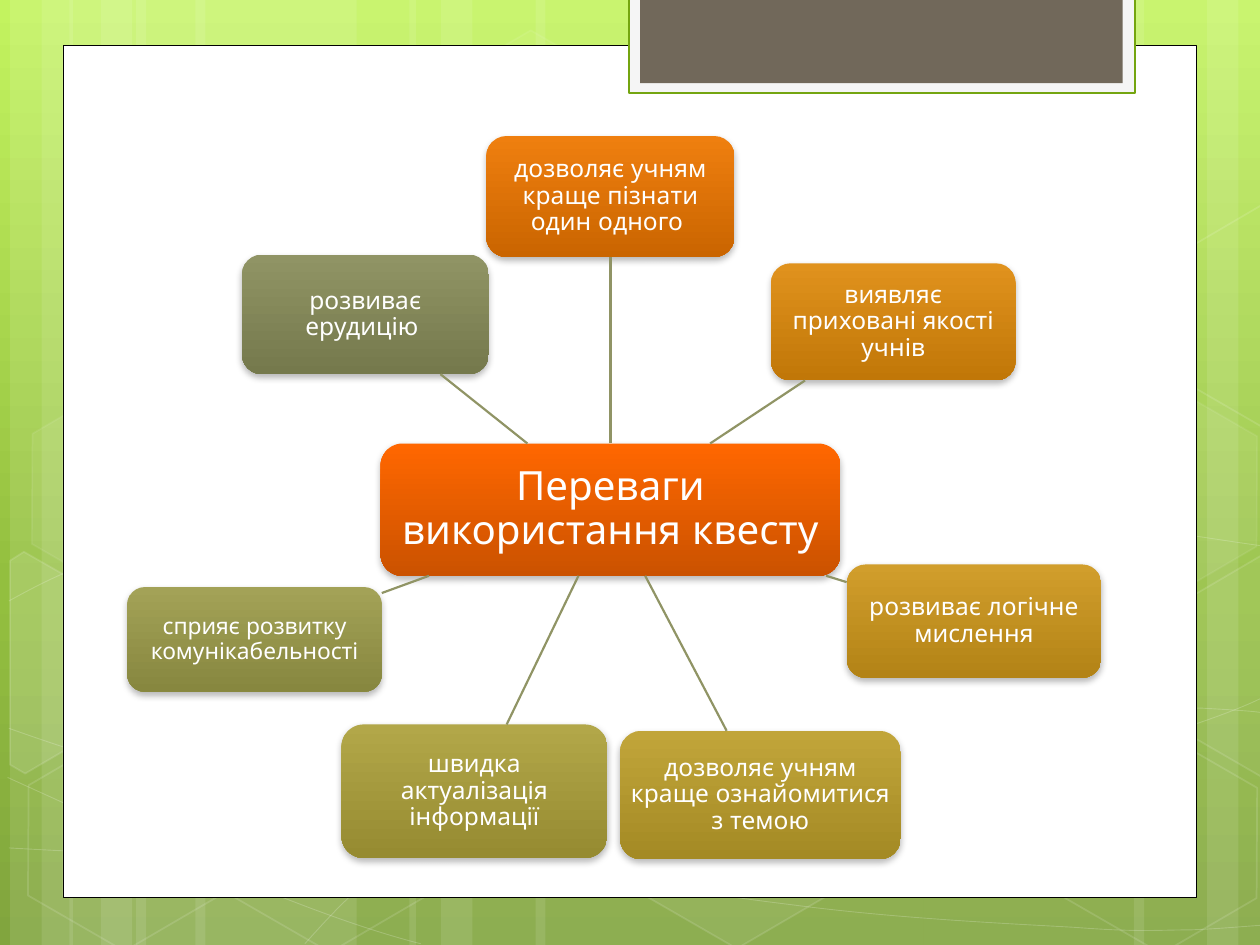
from lxml import etree
from copy import deepcopy
from pptx import Presentation
from pptx.dml.color import RGBColor
from pptx.enum.shapes import MSO_CONNECTOR, MSO_SHAPE
from pptx.enum.text import MSO_ANCHOR, PP_ALIGN
from pptx.oxml.ns import qn
from pptx.util import Inches, Pt

WHITE = RGBColor(0xFF, 0xFF, 0xFF)
BLACK = RGBColor(0x00, 0x00, 0x00)
OFF_WHITE = RGBColor(0xF5, 0xF5, 0xF5)
GREEN = RGBColor(0x74, 0xA5, 0x10)
BROWN = RGBColor(0x71, 0x68, 0x5A)
OLIVE = RGBColor(0x90, 0x94, 0x65)
BACKGROUND_STOPS = [(0, RGBColor(0xC3, 0xF3, 0x5F)),
                    (0.62, RGBColor(0x93, 0xBF, 0x3F)),
                    (1, RGBColor(0x81, 0xA5, 0x3E))]
FONT = "Quicksand"

# left, width
BANDS = [(1.08, 1.75), (0.08, 0.5), (0.33, 0.83), (1.55, 1.75), (0.55, 0.5), (0.8, 0.83),
         (7.33, 1.75), (9.58, 0.5), (9, 0.83), (4.25, 3.08), (3.25, 0.5), (3.5, 0.83)]
# start point followed by three points for each Bezier segment
WAVES = [
    [(0.07, 6.73), (0.61, 6.76), (1.15, 6.79), (1.9, 6.78), (2.65, 6.77), (3.58, 6.75),
     (4.58, 6.65), (5.58, 6.55), (7, 6.36), (7.92, 6.17), (8.83, 5.98), (9.77, 5.68),
     (10.07, 5.51)],
    [(0.07, 4.77), (0.36, 4.61), (0.65, 4.46), (1.21, 4.31), (1.78, 4.16), (2.59, 3.94),
     (3.47, 3.87), (4.36, 3.8), (5.44, 3.79), (6.54, 3.87), (7.64, 3.95), (9.47, 4.26),
     (10.07, 4.34)],
    [(0.06, 6.17), (1.27, 6.72), (2.47, 7.27), (3.34, 7.49)],
    [(0.07, 5.78), (0.38, 5.89), (0.7, 6), (1.28, 6.16), (1.86, 6.31), (2.73, 6.56),
     (3.57, 6.73), (4.4, 6.9), (5.45, 7.08), (6.28, 7.18), (7.11, 7.29), (8, 7.33),
     (8.53, 7.36), (9.05, 7.4), (9.19, 7.38), (9.45, 7.38), (9.71, 7.37), (9.89, 7.35),
     (10.07, 7.34)],
    [(2.42, 7.49), (2.6, 7.29), (2.78, 7.09), (3.02, 6.91), (3.26, 6.73), (3.6, 6.53),
     (3.88, 6.39), (4.16, 6.25), (4.33, 6.19), (4.7, 6.09), (5.06, 5.99), (5.73, 5.85),
     (6.08, 5.78), (6.44, 5.71), (6.49, 5.71), (6.8, 5.69), (7.11, 5.66), (7.6, 5.63),
     (7.94, 5.62), (8.29, 5.61), (8.86, 5.62), (8.86, 5.62), (9.08, 5.62), (9.31, 5.62),
     (9.53, 5.62), (9.71, 5.63), (9.88, 5.64), (9.97, 5.65), (10.03, 5.66), (10.03, 5.65),
     (10.06, 5.66)],
]
# left, top, fill opacity, line opacity (percent)
HEXAGONS = [(3.34, 0.36, 4, 8), (4.97, 5.89, 6, 12), (0.11, 5.91, 0, 12),
            (0.14, 3.12, 7, 8), (1.74, 5.92, 0, 12), (7.53, 4.53, 10, 12),
            (8.34, 5.93, 0, 12), (8.34, 3.14, 7, 8)]
# corner points, fill opacity
CUT_HEXAGONS = [
    ([(0.08, 4.45), (0.19, 4.38), (0.96, 4.82), (0.95, 5.7), (0.2, 6.14), (0.08, 6.07)], 10),
    ([(9.26, 4.85), (10.01, 4.41), (10.09, 4.46), (10.09, 6.13), (10.02, 6.17), (9.26, 5.73)], 4),
    ([(9.26, 2.07), (10.01, 1.63), (10.1, 1.68), (10.09, 3.35), (10.02, 3.39), (9.26, 2.95)], 0),
]
HUB = ("Переваги використання квесту", (3.02, 3.52, 3.65, 1.05), "FF6700", "CB5200", 23, 0.05)
# text, box, top colour, bottom colour, text size, inset
NODES = [
    ("дозволяє учням краще пізнати один одного ", (3.86, 1.08, 1.97, 0.96), "EF7F0F", "CA6500", 14, 0.03),
    ("виявляє приховані якості учнів", (6.12, 2.09, 1.94, 0.93), "E0921D", "C17708", 14, 0.03),
    ("розвиває логічне мислення", (6.72, 4.48, 2.02, 0.9), "D19E2C", "B38316", 14, 0.03),
    ("дозволяє учням краще ознайомитися з темою", (4.92, 5.8, 2.23, 1.02), "C1A53A", "A48A24", 14, 0.03),
    ("швидка актуалізація інформації", (2.71, 5.75, 2.11, 1.06), "B2A749", "968B31", 14, 0.03),
    ("сприяє розвитку комунікабельності", (1.01, 4.66, 2.02, 0.83), "A3A257", "87873F", 13, 0.03),
    ("розвиває ерудицію ", (1.92, 2.02, 1.96, 0.95), "909465", "75794C", 14, 0.03),
]


def set_opacity(parent, percent):
    for color in parent.iter(qn("a:srgbClr")):
        etree.SubElement(color, qn("a:alpha"), val=str(percent * 1000))


def style(shape, fill=None, fill_opacity=100, line=None, width=1, line_opacity=100):
    shape.shadow.inherit = False
    if fill is None or fill_opacity == 0:
        shape.fill.background()
    else:
        shape.fill.solid()
        shape.fill.fore_color.rgb = fill
        set_opacity(shape._element.spPr.find(qn("a:solidFill")), fill_opacity)
    if line is None:
        shape.line.fill.background()
    else:
        shape.line.color.rgb = line
        shape.line.width = Pt(width)
        set_opacity(shape._element.spPr.find(qn("a:ln")), line_opacity)


def add_box(slide, preset, box, **look):
    shape = slide.shapes.add_shape(preset, *map(Inches, box))
    style(shape, **look)
    return shape


def add_outline(slide, points, closed, **look):
    corners = [(Inches(x), Inches(y)) for x, y in points]
    builder = slide.shapes.build_freeform(*corners[0])
    builder.add_line_segments(corners[1:], close=closed)
    shape = builder.convert_to_shape()
    style(shape, **look)
    return shape


def bend(shape):
    """Turn every three line segments of an outline into one Bezier curve."""
    lines = list(shape._element.iter(qn("a:lnTo")))
    for start in range(0, len(lines), 3):
        curve = etree.Element(qn("a:cubicBezTo"))
        lines[start].addprevious(curve)
        for line in lines[start:start + 3]:
            curve.append(line[0])
            line.getparent().remove(line)


def add_backdrop(slide, height):
    fill = slide.background.fill
    fill.gradient()
    fill.gradient_angle = 270
    stop_list = next(slide._element.iter(qn("a:gsLst")))
    stop_list.append(deepcopy(stop_list[-1]))
    for stop, (position, color) in zip(fill.gradient_stops, BACKGROUND_STOPS):
        stop.position = position
        stop.color.rgb = color
    for left, width in BANDS:
        add_box(slide, MSO_SHAPE.RECTANGLE, (left, 0, width, height), fill=WHITE, fill_opacity=10)
    for controls in WAVES:
        bend(add_outline(slide, controls, False, line=WHITE, width=0.5, line_opacity=20))
    for left, top, opacity, line_opacity in HEXAGONS:
        hexagon = add_box(slide, MSO_SHAPE.HEXAGON, (left, top, 1.75, 1.52), fill=WHITE,
                          fill_opacity=opacity, line=WHITE, line_opacity=line_opacity)
        hexagon.adjustments[0] = 0.285
        hexagon.rotation = 30
    for points, opacity in CUT_HEXAGONS:
        add_outline(slide, points, True, fill=WHITE, fill_opacity=opacity, line=WHITE, line_opacity=12)


def add_panel(slide, box):
    """Place the white page and the framed tab that hangs over its top edge."""
    left, top, width, height = box
    add_box(slide, MSO_SHAPE.RECTANGLE, box, fill=WHITE, line=BLACK, width=0.5)
    tab_left, tab_top = left + 4.49, top - 0.38
    add_box(slide, MSO_SHAPE.RECTANGLE, (tab_left, tab_top, 4.02, 0.76),
            fill=OFF_WHITE, line=GREEN, width=1.25)
    add_box(slide, MSO_SHAPE.RECTANGLE, (tab_left + 0.09, tab_top, 3.83, 0.68), fill=BROWN)


def add_node(slide, text, box, top_color, bottom_color, size, inset):
    shape = add_box(slide, MSO_SHAPE.ROUNDED_RECTANGLE, box)
    shape.fill.gradient()
    shape.fill.gradient_angle = 270
    for stop, position, color in zip(shape.fill.gradient_stops, (0, 1), (top_color, bottom_color)):
        stop.position = position
        stop.color.rgb = RGBColor.from_string(color)
    shadow = etree.SubElement(shape._element.spPr.find(qn("a:effectLst")), qn("a:outerShdw"),
                              blurRad=str(Pt(4)), dist=str(Pt(2)), dir="5400000", rotWithShape="0")
    etree.SubElement(shadow, qn("a:srgbClr"), val=str(BLACK))
    set_opacity(shadow, 28)
    frame = shape.text_frame
    frame.word_wrap = True
    frame.vertical_anchor = MSO_ANCHOR.MIDDLE
    for side in ("left", "top", "right", "bottom"):
        setattr(frame, f"margin_{side}", Inches(inset))
    paragraph = frame.paragraphs[0]
    paragraph.text = text
    paragraph.alignment = PP_ALIGN.CENTER
    paragraph.line_spacing = 0.9
    for name, value in {"name": FONT, "size": Pt(size)}.items():
        setattr(paragraph.font, name, value)
    paragraph.font.color.rgb = WHITE
    return shape


def center_of(shape):
    return shape.left + shape.width / 2, shape.top + shape.height / 2


def edge_point(shape, target):
    """Return where the line from the shape's centre to target leaves its box."""
    x, y = center_of(shape)
    dx, dy = target[0] - x, target[1] - y
    ratio = 1 / max(abs(dx) * 2 / shape.width, abs(dy) * 2 / shape.height)
    return round(x + dx * ratio), round(y + dy * ratio)


def add_spoke(slide, hub, node):
    start, end = edge_point(hub, center_of(node)), edge_point(node, center_of(hub))
    spoke = slide.shapes.add_connector(MSO_CONNECTOR.STRAIGHT, *start, *end)
    spoke.line.color.rgb = OLIVE
    spoke.line.width = Pt(1.25)
    etree.SubElement(spoke._element.spPr, qn("a:effectLst"))
    if abs(start[0] - end[0]) < Inches(0.01):
        spoke.begin_connect(hub, 0)
        spoke.end_connect(node, 2)


def add_mind_map(slide):
    hub = add_node(slide, *HUB)
    for entry in NODES:
        add_spoke(slide, hub, add_node(slide, *entry))


def main():
    presentation = Presentation()
    presentation.slide_width, presentation.slide_height = Inches(10), Inches(7.5)
    slide = presentation.slides.add_slide(presentation.slide_layouts[6])
    add_backdrop(slide, 7.5)
    add_panel(slide, (0.5, 0.36, 9, 6.76))
    add_mind_map(slide)
    presentation.save("out.pptx")


if __name__ == "__main__":
    main()
